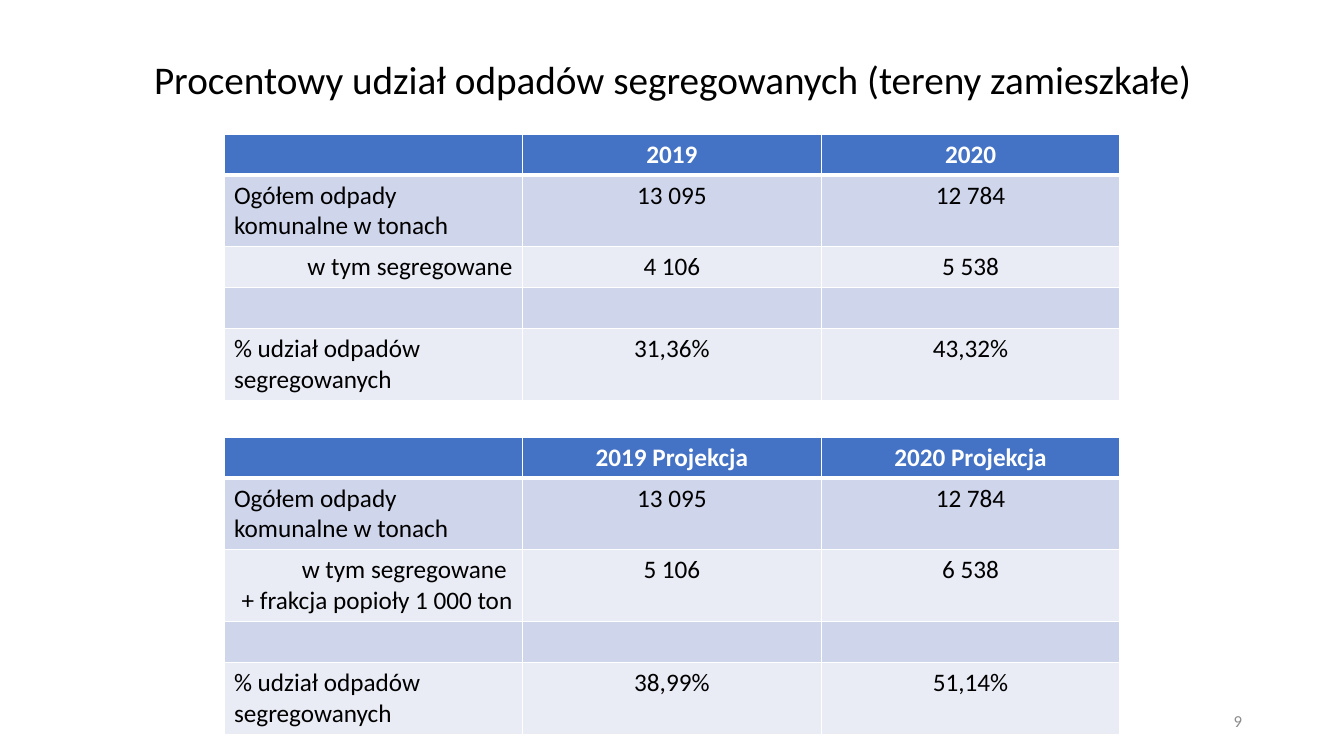
"""Build the slide on the share of segregated waste in inhabited areas."""
import dataclasses

import lxml.etree
import pptx
import pptx.dml.color
import pptx.enum.text
import pptx.oxml.ns
import pptx.util

ALIGN = pptx.enum.text.PP_ALIGN


@dataclasses.dataclass(frozen=True)
class Theme:
    font: str = "Calibri"
    title_size: int = 28
    table_size: int = 18
    number_size: int = 12
    ink: str = "000000"
    paper: str = "FFFFFF"
    header: str = "4472C4"
    bands: tuple = ("CFD5EA", "E9EBF5")
    muted: str = "8C8C8C"
    rule: int = 1
    header_rule: int = 3


def px(length):
    return pptx.util.Emu(round(length * 914400 / 100.8))


def rgb(value):
    return pptx.dml.color.RGBColor.from_string(value)


class SlideBuilder:
    def __init__(self, deck, theme):
        self.theme = theme
        self.slide = deck.slides.add_slide(deck.slide_layouts[5])

    def add_text(self, paragraph, text, size, color, align, bold=False):
        paragraph.alignment = align
        run = paragraph.add_run()
        run.text = text
        run.font.name = self.theme.font
        run.font.size = pptx.util.Pt(size)
        run.font.bold = bold
        run.font.color.rgb = rgb(color)

    def title(self, text, left, top, width, height):
        heading = self.slide.shapes.title
        heading.left, heading.top = px(left), px(top)
        heading.width, heading.height = px(width), px(height)
        frame = heading.text_frame
        frame.auto_size = pptx.enum.text.MSO_AUTO_SIZE.NONE
        frame.vertical_anchor = pptx.enum.text.MSO_ANCHOR.MIDDLE
        frame.paragraphs[0].line_spacing = 0.9
        self.add_text(frame.paragraphs[0], text, self.theme.title_size,
                      self.theme.ink, ALIGN.CENTER)

    def page_number(self, text, left, top, width, height):
        box = self.slide.shapes.add_textbox(px(left), px(top), px(width), px(height))
        frame = box.text_frame
        frame.word_wrap = True
        frame.vertical_anchor = pptx.enum.text.MSO_ANCHOR.MIDDLE
        self.add_text(frame.paragraphs[0], text, self.theme.number_size,
                      self.theme.muted, ALIGN.RIGHT)

    def border(self, cell, side, points):
        qn = pptx.oxml.ns.qn
        properties = cell._tc.get_or_add_tcPr()
        line = lxml.etree.SubElement(properties, qn(f"a:ln{side}"),
                                     w=str(int(pptx.util.Pt(points))))
        fill = lxml.etree.SubElement(line, qn("a:solidFill"))
        lxml.etree.SubElement(fill, qn("a:srgbClr"), val=self.theme.paper)

    def cell(self, cell, text, row, column):
        theme = self.theme
        is_header = row == 0
        widths = {"L": theme.rule, "R": theme.rule,
                  "T": theme.header_rule if row == 1 else theme.rule,
                  "B": theme.header_rule if is_header else theme.rule}
        for side, points in widths.items():
            self.border(cell, side, points)
        cell.fill.solid()
        cell.fill.fore_color.rgb = rgb(theme.header if is_header else theme.bands[(row - 1) % 2])
        if not text:
            return
        if column:
            align = ALIGN.CENTER
        else:
            align = ALIGN.RIGHT if row == 2 else ALIGN.LEFT
        frame = cell.text_frame
        for index, line in enumerate(text.split("\n")):
            paragraph = frame.add_paragraph() if index else frame.paragraphs[0]
            self.add_text(paragraph, line, theme.table_size,
                          theme.paper if is_header else theme.ink, align, is_header)

    def table(self, rows, heights, left, top, width):
        columns = len(rows[0])
        table = self.slide.shapes.add_table(
            len(rows), columns, px(left), px(top), px(width), px(sum(heights))).table
        for column in table.columns:
            column.width = px(width / columns)
        for row, (texts, height) in enumerate(zip(rows, heights)):
            table.rows[row].height = px(height)
            for column, text in enumerate(texts):
                self.cell(table.cell(row, column), text, row, column)


def waste_rows(years, totals, segregated_label, segregated, shares):
    return [
        ("", *years),
        ("Ogółem odpady komunalne w tonach", *totals),
        (segregated_label, *segregated),
        ("", "", ""),
        ("% udział odpadów segregowanych", *shares),
    ]


def main():
    deck = pptx.Presentation()
    deck.slide_width, deck.slide_height = px(1344), px(756)
    builder = SlideBuilder(deck, Theme())
    builder.title("Procentowy udział odpadów segregowanych (tereny zamieszkałe)",
                  93, 40, 1159, 84)

    totals = ("13 095", "12 784")
    actual = waste_rows(("2019", "2020"), totals, "w tym segregowane",
                        ("4 106", "5 538"), ("31,36%", "43,32%"))
    projection = waste_rows(("2019 Projekcja", "2020 Projekcja"), totals,
                            "w tym segregowane \n+ frakcja popioły 1 000 ton",
                            ("5 106", "6 538"), ("38,99%", "51,14%"))
    builder.table(actual, (41, 71, 41, 41, 71), 224, 134, 896)
    builder.table(projection, (41, 71, 72, 41, 71), 224, 437, 896)
    builder.page_number("9", 950, 701, 302, 40)
    deck.save("out.pptx")


if __name__ == "__main__":
    main()
